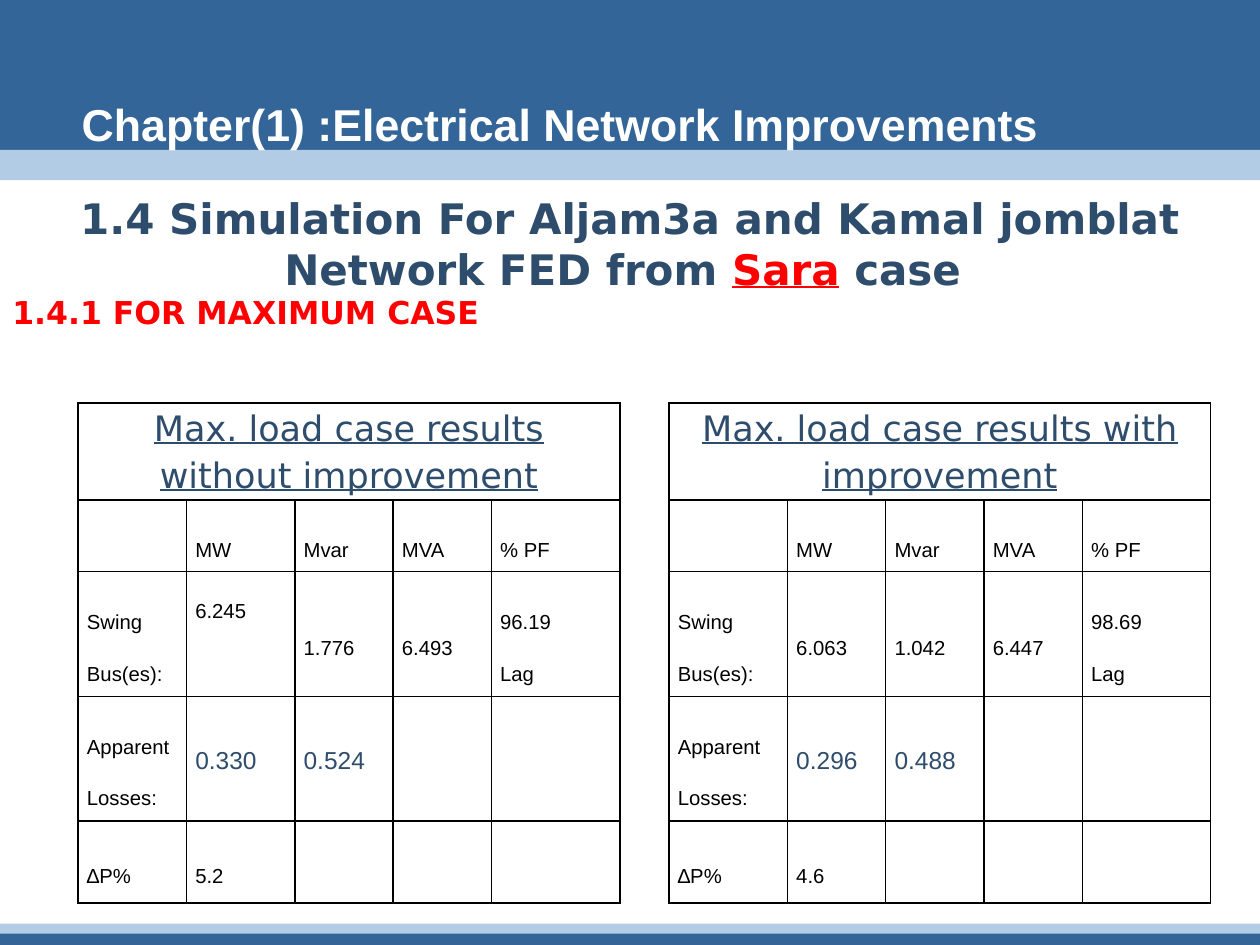
from dataclasses import dataclass

from lxml.etree import SubElement
from pptx import Presentation
from pptx.dml.color import RGBColor
from pptx.enum.shapes import MSO_SHAPE
from pptx.enum.text import MSO_ANCHOR, PP_ALIGN
from pptx.oxml.ns import qn
from pptx.util import Inches, Pt


@dataclass(frozen=True)
class Theme:
    """Colours, fonts and type sizes of the deck."""
    dark: str = "336599"
    light: str = "B3CCE6"
    navy: str = "2E4C6B"
    red: str = "FF0000"
    white: str = "FFFFFF"
    black: str = "000000"
    sans: str = "Arial"
    display: str = "DejaVu Sans"
    title: int = 44
    heading: int = 24
    sub: int = 18
    cell: int = 20
    loss: int = 14


T = Theme()
W, H = 10, 7.5
ROWS = [0.57, 0.57, 0.99, 0.99, 0.65]
UNITS = ["", "MW", "Mvar", "MVA", "% PF"]


def rgb(value):
    """Turn a hex string into a colour."""
    return RGBColor.from_string(value)


def add_text(p, text, size=T.cell, color=T.black, font=T.sans, bold=False,
             underline=False, lowered=False):
    """Append one formatted run to a paragraph."""
    r = p.add_run()
    r.text = text
    f = r.font
    f.size, f.name, f.bold, f.underline = Pt(size), font, bold, underline
    f.color.rgb = rgb(color)
    if lowered:
        r._r.get_or_add_rPr().set("baseline", "-25000")


def add_band(s, top, height, color):
    """Draw a full-width band."""
    sp = s.shapes.add_shape(MSO_SHAPE.RECTANGLE, 0, Inches(top), Inches(W), Inches(height))
    sp.shadow.inherit = False
    sp.fill.solid()
    sp.fill.fore_color.rgb = rgb(color)
    sp.line.fill.background()


def add_frame(s, x, y, w, h, wrap=True):
    """Add a text box and return its text frame."""
    tf = s.shapes.add_textbox(Inches(x), Inches(y), Inches(w), Inches(h)).text_frame
    tf.word_wrap = wrap
    return tf


def add_bands(s):
    """Draw the header and footer bands."""
    add_band(s, 0, 0.175 * H, T.dark)
    add_band(s, 7.37, H - 7.37, T.dark)
    add_band(s, 1.19, 0.24, T.light)
    add_band(s, 7.33, 0.08, T.light)


def add_title(s, x, y, w, h):
    """Write the chapter title in the header."""
    p = add_frame(s, x, y, w, h, wrap=False).paragraphs[0]
    add_text(p, "Chapter(1) :Electrical Network Improvements", size=T.title,
             color=T.white, bold=True, lowered=True)


def add_heading(s, x, y, w, h):
    """Write the section heading and the case line."""
    tf = add_frame(s, x, y, w, h)
    p = tf.paragraphs[0]
    p.alignment = PP_ALIGN.CENTER
    look = dict(size=T.heading, font=T.display, bold=True)
    add_text(p, "1.4 Simulation For Aljam3a and Kamal jomblat Network FED from ",
             color=T.navy, **look)
    add_text(p, "Sara", color=T.red, underline=True, **look)
    add_text(p, " case ", color=T.navy, **look)
    add_text(tf.add_paragraph(), "1.4.1 FOR MAXIMUM CASE", size=T.sub,
             color=T.red, font=T.display, bold=True)


def add_borders(cell):
    """Give a cell thin black borders on all sides."""
    tcPr = cell._tc.get_or_add_tcPr()
    for i, side in enumerate(("a:lnL", "a:lnR", "a:lnT", "a:lnB")):
        ln = tcPr.makeelement(qn(side), {"w": str(Pt(1))})
        SubElement(SubElement(ln, qn("a:solidFill")), qn("a:srgbClr"), val=T.black)
        tcPr.insert(i, ln)


def fill_cell(cell, text, before=0, anchor=MSO_ANCHOR.MIDDLE, align=None, **look):
    """Write the lines of text into a cell."""
    cell.margin_left = cell.margin_right = Inches(0.07)
    cell.margin_top = cell.margin_bottom = 0
    cell.vertical_anchor = anchor
    tf = cell.text_frame
    for i, line in enumerate(text.split("\n")):
        p = tf.add_paragraph() if i else tf.paragraphs[0]
        p.line_spacing, p.space_before, p.alignment = 1.15, Pt(before), align
        add_text(p, line, **look)


def add_results(s, x, y, cols, caption, swing, losses, drop, first_anchor=MSO_ANCHOR.MIDDLE):
    """Build one table of load case results."""
    table = s.shapes.add_table(len(ROWS), len(cols), Inches(x), Inches(y),
                               Inches(sum(cols)), Inches(sum(ROWS))).table
    table.first_row = table.horz_banding = False
    for col, w in zip(table.columns, cols):
        col.width = Inches(w)
    for row, h in zip(table.rows, ROWS):
        row.height = Inches(h)
    for cell in table.iter_cells():
        cell.fill.background()
        add_borders(cell)
    table.cell(0, 0).merge(table.cell(0, len(cols) - 1))
    fill_cell(table.cell(0, 0), caption, before=24, anchor=MSO_ANCHOR.TOP,
              align=PP_ALIGN.CENTER, color=T.navy, font=T.display, underline=True)
    body = [UNITS, ["Swing Bus(es):", *swing], ["Apparent Losses:", *losses], ["∆P%", drop]]
    for i, values in enumerate(body, 1):
        for j, value in enumerate(values):
            if not value:
                continue
            is_loss = i == 3 and j > 0
            look = dict(size=T.loss, color=T.navy) if is_loss else dict(lowered=True)
            fill_cell(table.cell(i, j), value, before=24 if j == 0 or i in (1, 4) else 0,
                      anchor=first_anchor if (i, j) == (2, 1) else MSO_ANCHOR.MIDDLE, **look)


def main():
    """Build and save the slide."""
    prs = Presentation()
    prs.slide_width, prs.slide_height = Inches(W), Inches(H)
    s = prs.slides.add_slide(prs.slide_layouts[6])
    add_bands(s)
    add_title(s, 0.55, 0.31, 0.9 * W, 0.59)
    add_heading(s, 0, 1.48, W, 1.99)
    add_results(s, 5.31, 3.2, [0.94, 0.78, 0.78, 0.78, 1.02],
                "Max. load case results with improvement",
                ["6.063", "1.042", "6.447", "98.69\nLag"], ["0.296", "0.488"], "4.6")
    add_results(s, 0.62, 3.2, [0.86, 0.86, 0.78, 0.78, 1.02],
                "Max. load case results without improvement",
                ["6.245", "1.776", "6.493", "96.19\nLag"], ["0.330", "0.524"], "5.2",
                first_anchor=MSO_ANCHOR.TOP)
    prs.save("out.pptx")


if __name__ == "__main__":
    main()
